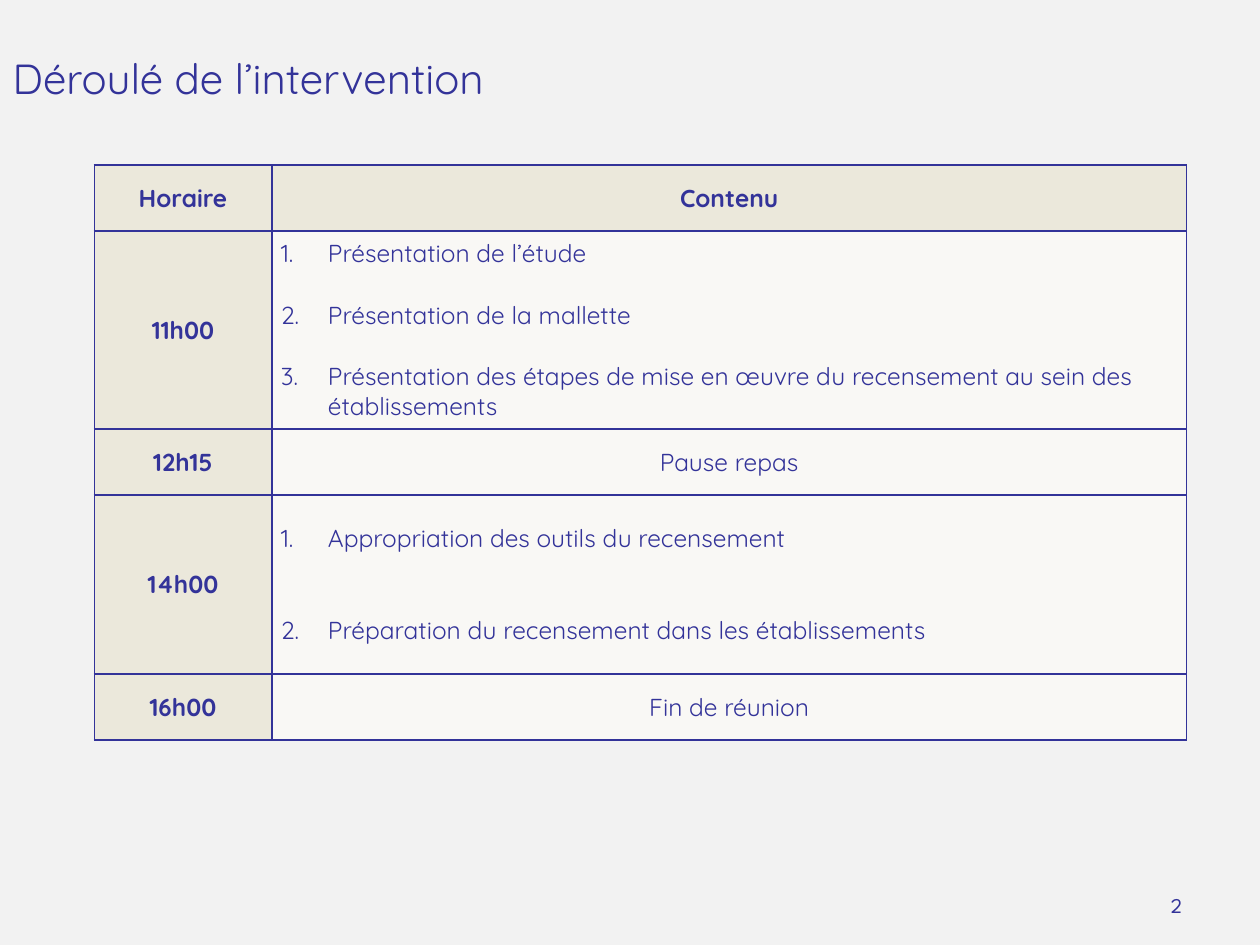
from lxml.etree import SubElement
from pptx import Presentation
from pptx.dml.color import RGBColor
from pptx.enum.text import MSO_ANCHOR, PP_ALIGN
from pptx.oxml.ns import qn
from pptx.util import Cm, Pt

INDIGO = RGBColor(0x33, 0x33, 0x99)
BEIGE = RGBColor(0xEB, 0xE8, 0xDB)
IVORY = RGBColor(0xF9, 0xF8, 0xF5)
GREY = RGBColor(0xF2, 0xF2, 0xF2)

LINE = 17.5
COL_WIDTHS = [3.58, 18.44]
# time, content (a list is numbered), row height in cm, gap between items in points
ROWS = [
    ("Horaire", "Contenu", 1.33, 0),
    ("11h00", ["Présentation de l’étude",
               "Présentation de la mallette",
               "Présentation des étapes de mise en œuvre du recensement "
               "au sein des établissements"], 3.99, LINE),
    ("12h15", "Pause repas", 1.33, 0),
    ("14h00", ["Appropriation des outils du recensement",
               "Préparation du recensement dans les établissements"], 3.61, 2 * LINE),
    ("16h00", "Fin de réunion", 1.33, 0),
]


def write(p, text, size=14, bold=False, font="Quicksand", align=PP_ALIGN.CENTER, before=0):
    p.alignment = align
    p.space_before = Pt(before)
    r = p.add_run()
    r.text = text
    r.font.size = Pt(size)
    r.font.bold = bold
    r.font.name = font
    r.font.color.rgb = INDIGO


def number(p):
    pPr = p._p.get_or_add_pPr()
    pPr.set("marL", str(Cm(0.95)))
    pPr.set("indent", str(-Cm(0.95)))
    SubElement(pPr, qn("a:buFont"), typeface="+mj-lt")
    SubElement(pPr, qn("a:buAutoNum"), type="arabicPeriod")


def style_cell(cell, color):
    cell.vertical_anchor = MSO_ANCHOR.MIDDLE
    cell.margin_left = cell.margin_right = Cm(0.18)
    cell.margin_top = cell.margin_bottom = 0
    tcPr = cell._tc.get_or_add_tcPr()
    for side in ("a:lnL", "a:lnR", "a:lnT", "a:lnB"):
        ln = SubElement(tcPr, qn(side), w=str(Pt(1)))
        fill = SubElement(ln, qn("a:solidFill"))
        SubElement(fill, qn("a:srgbClr"), val=str(INDIGO))
    cell.fill.solid()
    cell.fill.fore_color.rgb = color


def write_list(tf, items, gap):
    for i, item in enumerate(items):
        p = tf.add_paragraph() if i else tf.paragraphs[0]
        number(p)
        write(p, item, align=PP_ALIGN.LEFT, before=gap if i else 0)


def add_title(s, text):
    title = s.shapes.title
    title.left, title.top, title.width, title.height = Cm(0), Cm(0.58), Cm(25.4), Cm(1.98)
    tf = title.text_frame
    tf.vertical_anchor = MSO_ANCHOR.MIDDLE
    write(tf.paragraphs[0], text, size=24, align=PP_ALIGN.LEFT)


def add_page_number(s, text):
    tf = s.shapes.add_textbox(Cm(22.63), Cm(17.65), Cm(2.18), Cm(1.19)).text_frame
    tf.word_wrap = True
    tf.vertical_anchor = MSO_ANCHOR.MIDDLE
    write(tf.paragraphs[0], text, size=12, font="League Spartan")


def add_schedule(s):
    height = sum(row[2] for row in ROWS)
    table = s.shapes.add_table(len(ROWS), len(COL_WIDTHS), Cm(1.9), Cm(3.33),
                               Cm(sum(COL_WIDTHS)), Cm(height)).table
    for col, width in zip(table.columns, COL_WIDTHS):
        col.width = Cm(width)
    for i, (time, content, row_height, gap) in enumerate(ROWS):
        table.rows[i].height = Cm(row_height)
        time_cell, content_cell = table.cell(i, 0), table.cell(i, 1)
        style_cell(time_cell, BEIGE)
        style_cell(content_cell, IVORY if i else BEIGE)
        write(time_cell.text_frame.paragraphs[0], time, bold=True)
        tf = content_cell.text_frame
        if isinstance(content, list):
            write_list(tf, content, gap)
        else:
            write(tf.paragraphs[0], content, bold=i == 0)


def main():
    prs = Presentation()
    prs.slide_width, prs.slide_height = Cm(25.4), Cm(19.05)
    s = prs.slides.add_slide(prs.slide_layouts[5])
    s.background.fill.solid()
    s.background.fill.fore_color.rgb = GREY
    add_title(s, "Déroulé de l’intervention")
    add_schedule(s)
    add_page_number(s, "2")
    prs.save("out.pptx")


if __name__ == "__main__":
    main()
